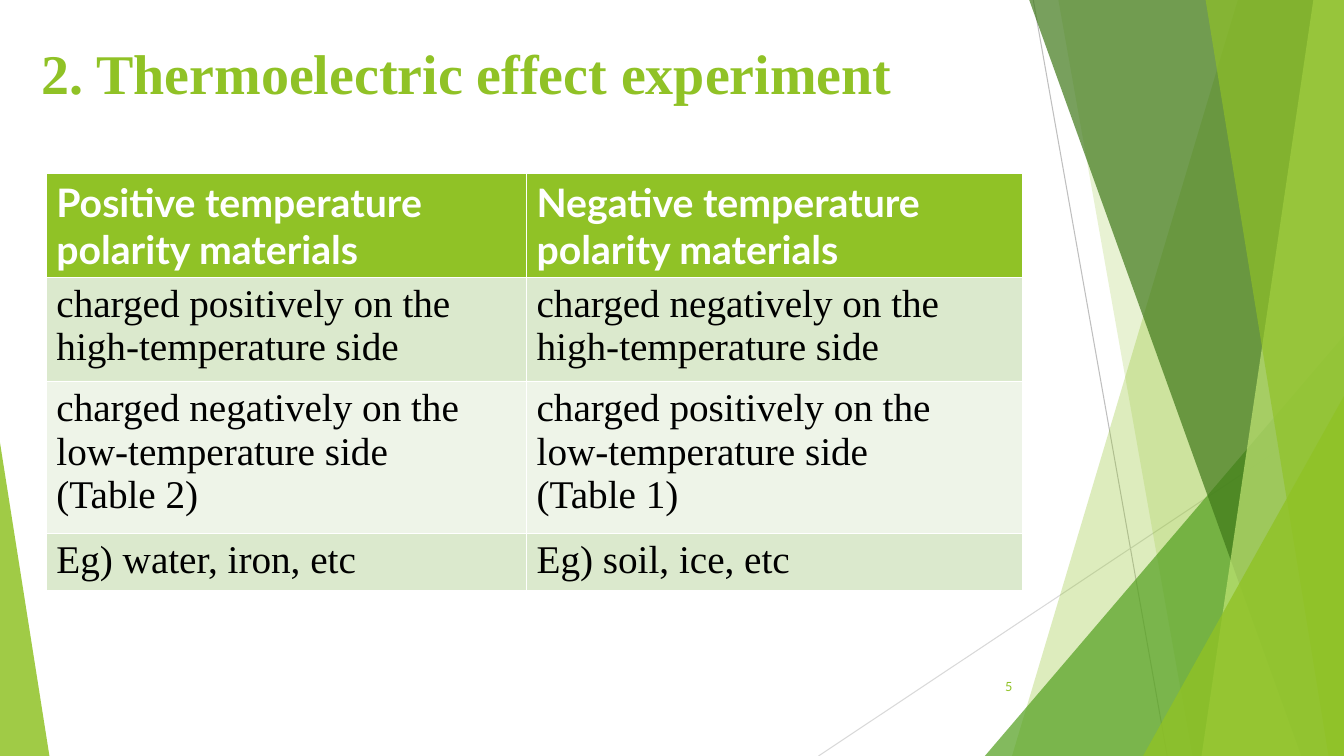
from lxml.etree import SubElement
from pptx import Presentation
from pptx.dml.color import RGBColor
from pptx.enum.shapes import MSO_CONNECTOR, MSO_SHAPE
from pptx.enum.text import MSO_ANCHOR, MSO_AUTO_SIZE, PP_ALIGN
from pptx.oxml.ns import qn
from pptx.util import Inches, Pt
from dataclasses import dataclass


@dataclass(frozen=True)
class Theme:
    lime: str = "90C226"
    leaf: str = "54A021"
    pine: str = "3F7819"
    pale: str = "C0E474"
    white: str = "FFFFFF"
    black: str = "000000"
    bands: tuple = ("DBE9CD", "EEF4E8")
    rules: tuple = ("BFBFBF", "D9D9D9")
    serif: str = "Times New Roman"
    sans: str = "Lato"
    title: int = 40
    body: int = 28
    note: int = 9


LOOK = Theme()
WIDE, HIGH = Inches(13.33), Inches(7.5)

LINES = [
    (76.88, 0, 86.85, 100),
    (100, 53.73, 60.9, 100),
]
REAR = [
    (92.1, 75.3, LOOK.lime, 30),
    (78.75, 88.72, LOOK.lime, 20),
]
FRONT = [
    (76.58, 96.82, LOOK.pine, 70),
    (97.72, 89.4, LOOK.pale, 70),
    (89.7, 98.85, LOOK.lime, 65),
]
ROWS = [
    ("Positive temperature polarity materials",
     "Negative temperature polarity materials"),
    ("charged positively on the\nhigh-temperature side",
     "charged negatively on the\nhigh-temperature side"),
    ("charged negatively on the\nlow-temperature side\n(Table 2)",
     "charged positively on the\nlow-temperature side\n(Table 1)"),
    ("Eg) water, iron, etc", "Eg) soil, ice, etc"),
]
COLS = (35.73, 36.9)
TALL = (13.6, 12.67, 18.67, 7.07)


def across(share):
    return int(WIDE * share / 100)


def down(share):
    return int(HIGH * share / 100)


def area(left, top, width, height):
    return across(left), down(top), across(width), down(height)


def apply(item, values):
    for name, value in values.items():
        setattr(item, name, value)


def style(frame, face, size, color, bold=False, align=PP_ALIGN.LEFT):
    for para in frame.paragraphs:
        para.alignment = align
        for run in para.runs:
            apply(run.font, {"name": face, "size": Pt(size), "bold": bold})
            run.font.color.rgb = RGBColor.from_string(color)


def paint(shape, color, alpha):
    shape.shadow.inherit = False
    shape.line.fill.background()
    shape.fill.solid()
    shape.fill.fore_color.rgb = RGBColor.from_string(color)
    tint = shape.element.spPr.find(".//" + qn("a:srgbClr"))
    SubElement(tint, qn("a:alpha"), val=str(alpha * 1000))


def add_rule(slide, ends, color):
    x1, y1, x2, y2 = ends
    rule = slide.shapes.add_connector(
        MSO_CONNECTOR.STRAIGHT, across(x1), down(y1), across(x2), down(y2))
    rule.line.width = Pt(0.75)
    rule.line.color.rgb = RGBColor.from_string(color)
    SubElement(rule.element.spPr, qn("a:effectLst"))


def add_pane(slide, top, base, color, alpha):
    pen = slide.shapes.build_freeform(across(top), 0)
    pen.add_line_segments(
        [(WIDE, 0), (WIDE, HIGH), (across(base), HIGH)], close=True)
    paint(pen.convert_to_shape(), color, alpha)


def add_peak(slide, box, apex, color, alpha):
    peak = slide.shapes.add_shape(MSO_SHAPE.ISOSCELES_TRIANGLE, *area(*box))
    peak.adjustments[0] = apex
    paint(peak, color, alpha)


def add_decor(slide):
    for ends, color in zip(LINES, LOOK.rules):
        add_rule(slide, ends, color)
    for pane in REAR:
        add_pane(slide, *pane)
    add_peak(slide, (73.28, 44.4, 26.72, 55.6), 1, LOOK.leaf, 72)
    for pane in FRONT:
        add_pane(slide, *pane)
    add_peak(slide, (85.05, 52.4, 14.95, 47.6), 1, LOOK.lime, 80)
    add_peak(slide, (0, 58.53, 3.68, 41.47), 0, LOOK.lime, 85)


def set_title(slide, text):
    title = slide.shapes.title
    spot = area(2.33, 3.47, 86.25, 6.13)
    apply(title, dict(zip(("left", "top", "width", "height"), spot)))
    frame = title.text_frame
    frame.text = text
    apply(frame, {"word_wrap": True, "auto_size": MSO_AUTO_SIZE.NONE,
                  "vertical_anchor": MSO_ANCHOR.TOP,
                  "margin_top": Inches(0.12)})
    style(frame, LOOK.serif, LOOK.title, LOOK.lime, True)
    slide.shapes.element.append(title.element)


def add_number(slide, text):
    frame = slide.shapes.add_textbox(
        *area(70.43, 88.13, 5.63, 5.33)).text_frame
    frame.text = text
    apply(frame, {"word_wrap": True, "vertical_anchor": MSO_ANCHOR.MIDDLE})
    style(frame, LOOK.sans, LOOK.note, LOOK.lime, align=PP_ALIGN.RIGHT)


def add_grid(slide):
    table = slide.shapes.add_table(
        len(ROWS), len(COLS), *area(3.45, 22.93, sum(COLS), sum(TALL))).table
    for col, share in zip(table.columns, COLS):
        col.width = across(share)
    for i, (row, share, texts) in enumerate(zip(table.rows, TALL, ROWS)):
        row.height = down(share)
        head = i == 0
        fill = LOOK.lime if head else LOOK.bands[(i - 1) % 2]
        face = LOOK.sans if head else LOOK.serif
        ink = LOOK.white if head else LOOK.black
        for cell, text in zip(row.cells, texts):
            cell.text = text
            cell.fill.solid()
            cell.fill.fore_color.rgb = RGBColor.from_string(fill)
            style(cell.text_frame, face, LOOK.body, ink, head)


def main():
    deck = Presentation()
    apply(deck, {"slide_width": WIDE, "slide_height": HIGH})
    slide = deck.slides.add_slide(deck.slide_layouts.get_by_name("Title Only"))
    add_decor(slide)
    set_title(slide, "2. Thermoelectric effect experiment")
    add_number(slide, "5")
    add_grid(slide)
    deck.save("out.pptx")


if __name__ == "__main__":
    main()
